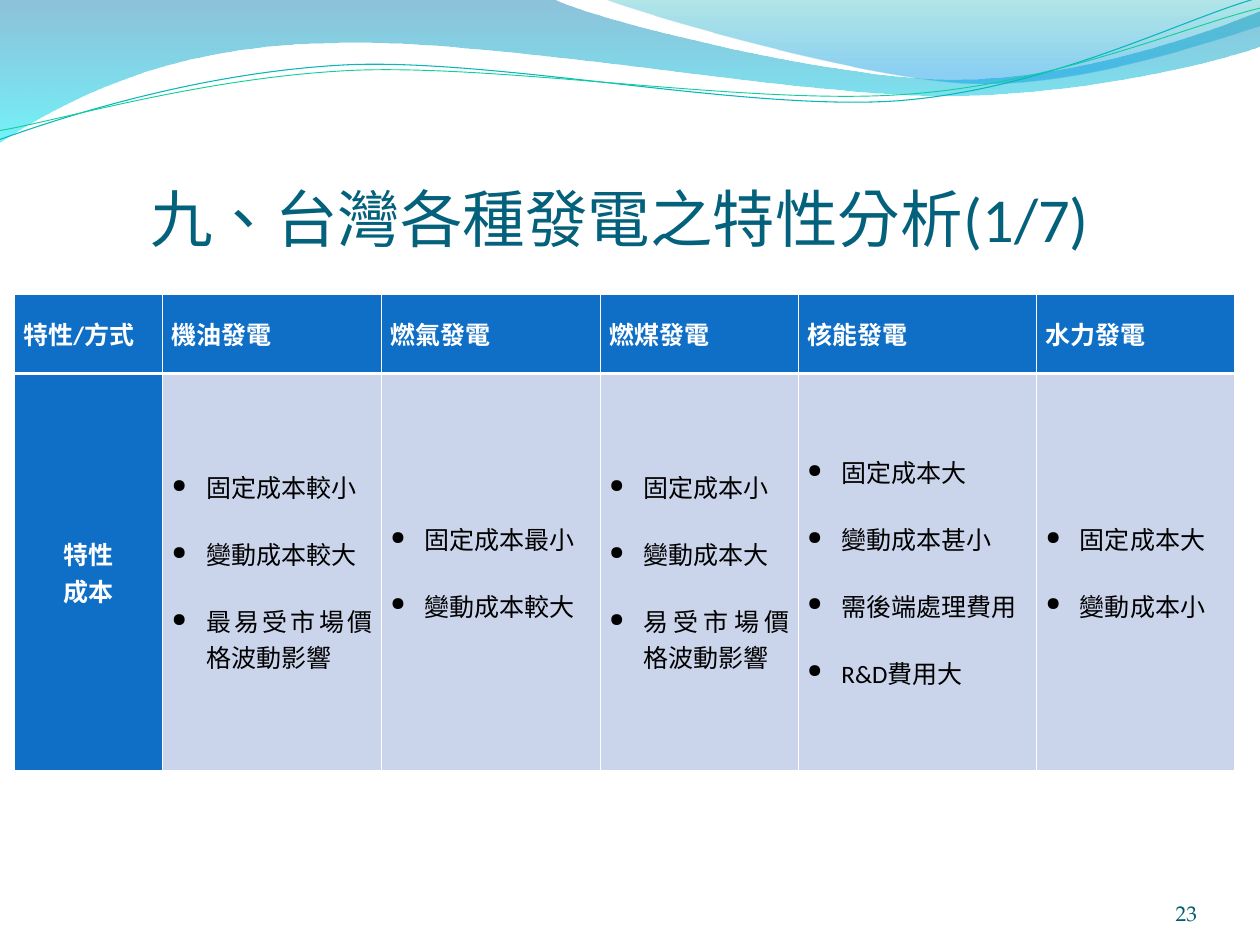
import math

import pptx
import pptx.dml.color
import pptx.enum.lang
import pptx.enum.text
import pptx.oxml
import pptx.oxml.ns
import pptx.util
from lxml import etree

Inches = pptx.util.Inches
Pt = pptx.util.Pt
RGBColor = pptx.dml.color.RGBColor
ALIGN = pptx.enum.text.PP_ALIGN
ANCHOR = pptx.enum.text.MSO_ANCHOR
CHINESE = pptx.enum.lang.MSO_LANGUAGE_ID.TRADITIONAL_CHINESE
qn = pptx.oxml.ns.qn

WHITE = RGBColor(0xFF, 0xFF, 0xFF)
BLACK = RGBColor(0, 0, 0)
TITLE_TEAL = RGBColor(0x04, 0x61, 0x7B)
NUMBER_TEAL = RGBColor(0x03, 0x5C, 0x75)
HEADER_BLUE = RGBColor(0x0F, 0x6F, 0xC6)
BODY_BLUE = RGBColor(0xCA, 0xD4, 0xEA)
DEEP_BLUE = RGBColor(0x00, 0x79, 0xAD)
CYAN = RGBColor(0x00, 0xE9, 0xF7)
AQUA = RGBColor(0x00, 0xAB, 0xB4)
SKY = RGBColor(0x00, 0x99, 0xE4)
LINE_TEAL = RGBColor(0x09, 0xB6, 0xBE)
LINE_GREEN = RGBColor(0x10, 0xCF, 0x9B)

BODY_FONT = "Calibri"
NUMBER_FONT = "TeX Gyre Pagella"
STRAND_TILT = 2.7

BANDS = [
    ([(0, -0.01), (6.16, -0.01),
      (6.66, 0.23, 9.29, 0.88, 10.62, 0.88),
      (11.94, 0.88, 13.42, 0.36, 14, 0.12), (14.01, 0.51),
      (13.77, 0.61, 12.18, 1.06, 10.44, 1.06),
      (8.71, 1.05, 5.34, 0.39, 3.6, 0.48),
      (1.81, 0.5, 0.64, 1.16, -0.01, 1.58)],
     [(0, DEEP_BLUE, 45), (100, CYAN, 55)]),
    ([(6.71, -0.01), (7.13, 0.16, 9.55, 0.86, 10.76, 0.92),
      (11.98, 0.97, 13.46, 0.45, 14, 0.29), (14, 0)],
     [(0, AQUA, 30), (80, SKY, 45), (100, SKY, 45)]),
]
STRANDS = [
    ([(0, 1.55), (0.67, 1.31, 2.21, 0.8, 3.87, 0.72),
      (5.54, 0.65, 8.3, 1.24, 9.98, 1.12),
      (11.66, 0.99, 13.14, 0.21, 13.97, -0.02)], (6.99, 0.81), LINE_TEAL, 0.85),
    ([(0, 1.45), (0.66, 1.34, 2.29, 0.85, 3.96, 0.78),
      (5.64, 0.72, 8.36, 1.17, 10.04, 1.05),
      (11.71, 0.94, 13.17, 0.29, 14, 0.09)], (7, 0.82), LINE_GREEN, 0.75),
]
COLUMN_WIDTHS = [1.65, 2.43, 2.43, 2.2, 2.65, 2.2]
ROW_HEIGHTS = [0.88, 4.41]
HEADINGS = ["特性/方式", "機油發電", "燃氣發電", "燃煤發電", "核能發電", "水力發電"]
ROW_LABEL = ["特性", "成本"]
COSTS = [
    ["固定成本較小", "變動成本較大", "最易受市場價格波動影響"],
    ["固定成本最小", "變動成本較大"],
    ["固定成本小", "變動成本大", "易受市場價格波動影響"],
    ["固定成本大", "變動成本甚小", "需後端處理費用", "R&D費用大"],
    ["固定成本大", "變動成本小"],
]


def add_bullet(pPr):
    clr = etree.SubElement(pPr, qn("a:buClr"))
    etree.SubElement(clr, qn("a:srgbClr"), val=str(BLACK))
    etree.SubElement(pPr, qn("a:buSzPct"), val="75000")
    etree.SubElement(pPr, qn("a:buChar"), char="●")


def write_text(tf, lines, size=20, color=BLACK, font=BODY_FONT, bold=False,
               align=ALIGN.JUSTIFY, bullet=False, margin=0, right=0, gap=0):
    for i, line in enumerate(lines):
        p = tf.paragraphs[0] if i == 0 else tf.add_paragraph()
        p.alignment = align
        pPr = p._p.get_or_add_pPr()
        pPr.set("marL", str(Inches(margin)))
        pPr.set("marR", str(Inches(right)))
        pPr.set("indent", str(Inches(-margin if bullet else 0)))
        if bullet:
            add_bullet(pPr)
        if i and gap:
            p.space_before = Pt(gap)
        r = p.add_run()
        r.text = line
        r.font.size = Pt(size)
        r.font.name = font
        r.font.bold = bold
        r.font.color.rgb = color
        r.font.language_id = CHINESE


def set_frame(tf, top=0):
    tf.word_wrap = True
    tf.auto_size = pptx.enum.text.MSO_AUTO_SIZE.NONE
    tf.vertical_anchor = ANCHOR.BOTTOM
    tf.margin_left = tf.margin_right = tf.margin_bottom = 0
    tf.margin_top = Inches(top)


def rotate(point, pivot, degrees):
    a = math.radians(degrees)
    dx, dy = point[0] - pivot[0], point[1] - pivot[1]
    return (pivot[0] + dx * math.cos(a) - dy * math.sin(a),
            pivot[1] + dx * math.sin(a) + dy * math.cos(a))


def add_outline(s, path, left, top, close, pivot=(0, 0), tilt=0):
    points = [rotate(point, pivot, tilt) for step in path
              for point in zip(step[::2], step[1::2])]
    points = [(Inches(left + x), Inches(top + y)) for x, y in points]
    builder = s.shapes.build_freeform(*points[0])
    builder.add_line_segments(points[1:], close=close)
    sp = builder.convert_to_shape()
    sp.shadow.inherit = False
    sp.rotation = -tilt
    segments = iter(list(sp._element.spPr.iter(qn("a:lnTo"))))
    for step in path[1:]:
        first = next(segments)
        if len(step) == 6:
            curve = etree.Element(qn("a:cubicBezTo"))
            first.addprevious(curve)
            for segment in (first, next(segments), next(segments)):
                curve.append(segment[0])
                segment.getparent().remove(segment)
    return sp


def fill_gradient(sp, stops):
    sp.fill.gradient()
    sp.fill.gradient_angle = 270
    gsLst = sp._element.spPr.find(qn("a:gradFill")).find(qn("a:gsLst"))
    for gs in list(gsLst):
        gsLst.remove(gs)
    for pos, color, opacity in stops:
        gs = etree.SubElement(gsLst, qn("a:gs"), pos=str(pos * 1000))
        clr = etree.SubElement(gs, qn("a:srgbClr"), val=str(color))
        etree.SubElement(clr, qn("a:alpha"), val=str(opacity * 1000))


def add_waves(s, left, top):
    for path, stops in BANDS:
        sp = add_outline(s, path, left, top, True)
        fill_gradient(sp, stops)
        sp.line.fill.background()
    for path, pivot, color, width in STRANDS:
        sp = add_outline(s, path, left, top, False, pivot, STRAND_TILT)
        sp.fill.background()
        sp.line.color.rgb = color
        sp.line.width = Pt(width)


def add_title(s, left, top, width, height):
    title = s.shapes.title
    title.left, title.top = Inches(left), Inches(top)
    title.width, title.height = Inches(width), Inches(height)
    set_frame(title.text_frame, top=0.07)
    write_text(title.text_frame, ["九、台灣各種發電之特性分析(1/7)"], size=50,
               color=TITLE_TEAL, align=ALIGN.CENTER)
    s.shapes._spTree.append(title._element)


def style_cell(cell, fill, bottom=1):
    cell.vertical_anchor = ANCHOR.MIDDLE
    cell.margin_left = cell.margin_right = Inches(0.1)
    cell.margin_top = cell.margin_bottom = 0
    tcPr = cell._tc.get_or_add_tcPr()
    for side, width in (("L", 1), ("R", 1), ("T", 1), ("B", bottom)):
        ln = etree.SubElement(tcPr, qn("a:ln" + side), w=str(Pt(width)))
        solid = etree.SubElement(ln, qn("a:solidFill"))
        etree.SubElement(solid, qn("a:srgbClr"), val=str(WHITE))
    cell.fill.solid()
    cell.fill.fore_color.rgb = fill


def add_cost_table(s, left, top):
    table = s.shapes.add_table(
        len(ROW_HEIGHTS), len(COLUMN_WIDTHS), Inches(left), Inches(top),
        Inches(sum(COLUMN_WIDTHS)), Inches(sum(ROW_HEIGHTS))).table
    for column, width in zip(table.columns, COLUMN_WIDTHS):
        column.width = Inches(width)
    for row, height in zip(table.rows, ROW_HEIGHTS):
        row.height = Inches(height)
    for i, heading in enumerate(HEADINGS):
        cell = table.cell(0, i)
        style_cell(cell, HEADER_BLUE, bottom=3)
        write_text(cell.text_frame, [heading], color=WHITE, bold=True,
                   align=ALIGN.JUSTIFY if i else ALIGN.LEFT)
    label = table.cell(1, 0)
    style_cell(label, HEADER_BLUE)
    write_text(label.text_frame, ROW_LABEL, color=WHITE, bold=True,
               align=ALIGN.CENTER, margin=0.08, right=0.08)
    for i, costs in enumerate(COSTS, 1):
        cell = table.cell(1, i)
        style_cell(cell, BODY_BLUE)
        write_text(cell.text_frame, costs, bullet=True, margin=0.38, gap=24.5)


def add_slide_number(s, left, top, width, height):
    box = s.shapes.add_textbox(Inches(left), Inches(top), Inches(width), Inches(height))
    set_frame(box.text_frame)
    write_text(box.text_frame, ["23"], size=17, color=NUMBER_TEAL,
               font=NUMBER_FONT, align=ALIGN.RIGHT)


def main():
    prs = pptx.Presentation()
    prs.slide_width, prs.slide_height = Inches(14), Inches(10.5)
    s = prs.slides.add_slide(prs.slide_layouts[5])
    add_waves(s, 0, 0)
    add_title(s, 0.27, 1.08, 13.23, 1.75)
    add_cost_table(s, 0.16, 3.27)
    add_slide_number(s, 12.13, 9.73, 1.17, 0.56)
    prs.save("out.pptx")


if __name__ == "__main__":
    main()
